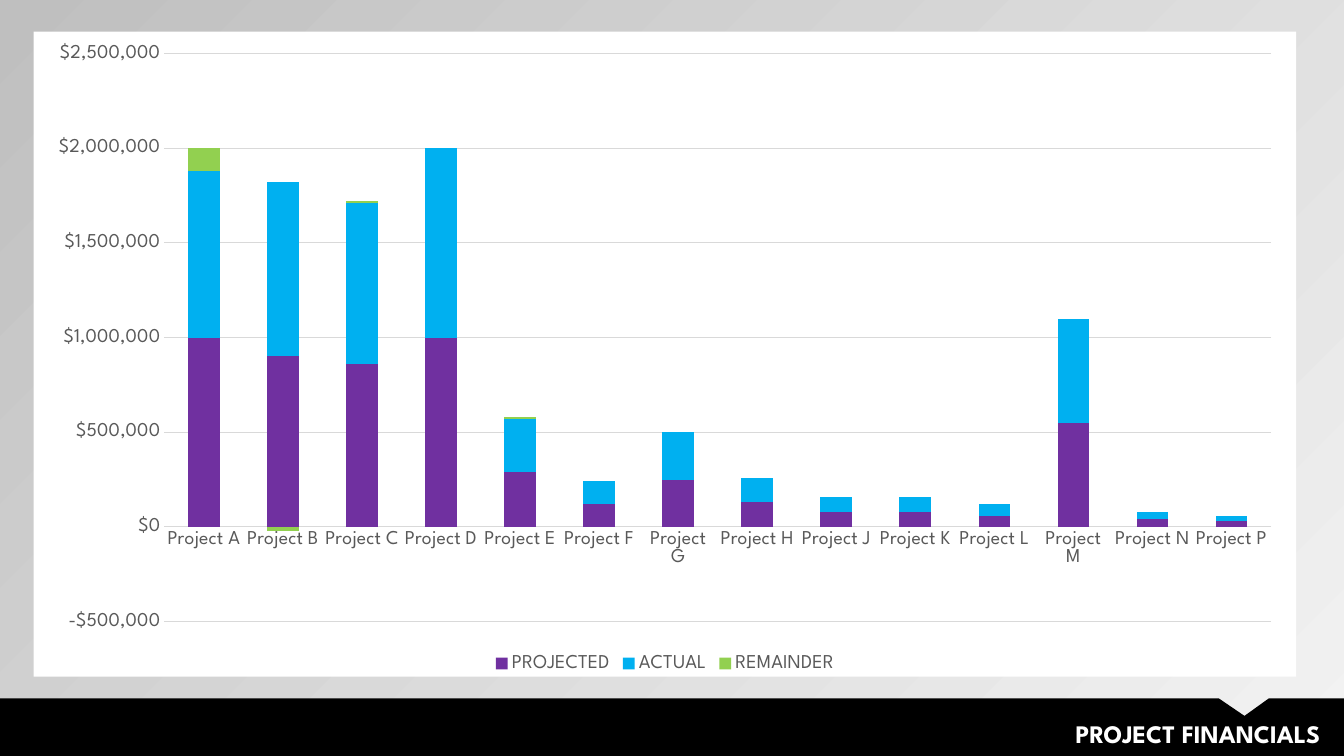
from lxml.etree import fromstring
from pptx import Presentation
from pptx.chart.data import CategoryChartData
from pptx.dml.color import RGBColor
from pptx.enum.chart import XL_CHART_TYPE, XL_LEGEND_POSITION, XL_TICK_MARK
from pptx.enum.text import MSO_ANCHOR, MSO_AUTO_SIZE, PP_ALIGN
from pptx.oxml.ns import nsdecls
from pptx.util import Inches, Pt

TITLE = "PROJECT FINANCIALS"
JOBS = [f"Project {mark}" for mark in "ABCDEFGHJKLMNP"]
SMALL = [120000, 250000, 130000, 80000, 80000, 60000, 550000, 40000, 30000]
DATA = {
    "PROJECTED": [1000000, 900000, 860000, 1000000, 290000] + SMALL,
    "ACTUAL": [880000, 920000, 850000, 1000000, 280000] + SMALL,
    "REMAINDER": [120000, -20000, 10000, 0, 10000] + [0] * len(SMALL),
}

THEME = {
    "font": "League Spartan", "head": 18, "label": 14,
    "band": "000000", "white": "FFFFFF", "text": "595959", "rule": "D9D9D9",
    "bars": ["7030A0", "00B0F0", "92D050"], "back": ["F2F2F2", "BFBFBF"],
}
WIDE, HIGH = 13.33, 7.5
PERCENT = {
    "chart": (2.5, 4.2, 93.95, 85.3),
    "title": (31.05, 94.4, 67.95, 5.3),
}
EDGE = 92.4
NOTCH = [(90.7, EDGE), (92.6, 94.7), (94.4, EDGE)]
BAND = [(0, EDGE), *NOTCH, (100, EDGE), (100, 100), (0, 100)]


def apply(item, form):
    for name, value in form.items():
        setattr(item, name, value)


def tint(key):
    return RGBColor.from_string(THEME.get(key, key))


def scale_up(parts):
    return [Inches(part * side / 100) for part, side in zip(parts, (WIDE, HIGH) * 2)]


def style(font, size, color, bold=False):
    apply(font, {"name": THEME["font"], "size": Pt(THEME[size]), "bold": bold})
    font.color.rgb = tint(color)


def paint(fill, color):
    fill.solid()
    fill.fore_color.rgb = tint(color)


def rule(line):
    line.width = Pt(0.75)
    line.color.rgb = tint("rule")


def add_back(slide):
    fill = slide.background.fill
    fill.gradient()
    fill.gradient_angle = 135
    for stop, color, spot in zip(fill.gradient_stops, THEME["back"], (0, 1)):
        stop.color.rgb = tint(color)
        stop.position = spot


def add_band(slide):
    dots = [scale_up(dot) for dot in BAND]
    outline = slide.shapes.build_freeform(*dots[0])
    outline.add_line_segments(dots[1:], close=True)
    band = outline.convert_to_shape()
    band.shadow.inherit = False
    paint(band.fill, "band")
    band.line.fill.background()
    return band


def add_title(slide, band):
    title = slide.shapes.title
    area = scale_up(PERCENT["title"])
    apply(title, dict(zip(("left", "top", "width", "height"), area)))
    frame = title.text_frame
    frame.text = TITLE
    apply(frame, {"word_wrap": True, "auto_size": MSO_AUTO_SIZE.NONE,
                  "vertical_anchor": MSO_ANCHOR.TOP})
    line = frame.paragraphs[0]
    line.alignment = PP_ALIGN.RIGHT
    style(line.runs[0].font, "head", "white", True)
    band._element.addnext(title._element)


def add_chart(slide):
    data = CategoryChartData()
    data.categories = JOBS
    for name, vals in DATA.items():
        data.add_series(name, vals)
    chart = slide.shapes.add_chart(
        XL_CHART_TYPE.COLUMN_STACKED, *scale_up(PERCENT["chart"]), data).chart
    apply(chart, {"has_title": False, "has_legend": True})
    style(chart.font, "label", "text")
    apply(chart.legend, {"position": XL_LEGEND_POSITION.BOTTOM, "include_in_layout": False})
    style(chart.legend.font, "label", "text")

    plot = chart.plots[0]
    apply(plot, {"gap_width": 150, "overlap": 100, "vary_by_categories": False})
    for bar, color in zip(plot.series, THEME["bars"]):
        bar.invert_if_negative = False
        paint(bar.format.fill, color)

    base, scale = chart.category_axis, chart.value_axis
    for axis in (base, scale):
        apply(axis, {"major_tick_mark": XL_TICK_MARK.NONE, "minor_tick_mark": XL_TICK_MARK.NONE})
        style(axis.tick_labels.font, "label", "text")
    rule(base.format.line)
    apply(scale, {"minimum_scale": -500000, "maximum_scale": 2500000,
                  "major_unit": 500000, "has_major_gridlines": True})
    apply(scale.tick_labels, {"number_format": '"$"#,##0', "number_format_is_linked": False})
    scale.format.line.fill.background()
    rule(scale.major_gridlines.format.line)

    panel = fromstring(
        f'<c:spPr {nsdecls("c", "a")}><a:solidFill><a:srgbClr val="{THEME["white"]}"/>'
        '</a:solidFill><a:ln><a:noFill/></a:ln></c:spPr>')
    chart.element.chart.addnext(panel)


def main():
    deck = Presentation()
    apply(deck, {"slide_width": Inches(WIDE), "slide_height": Inches(HIGH)})
    slide = deck.slides.add_slide(deck.slide_layouts[5])
    add_back(slide)
    add_title(slide, add_band(slide))
    add_chart(slide)
    deck.save("out.pptx")


if __name__ == "__main__":
    main()
